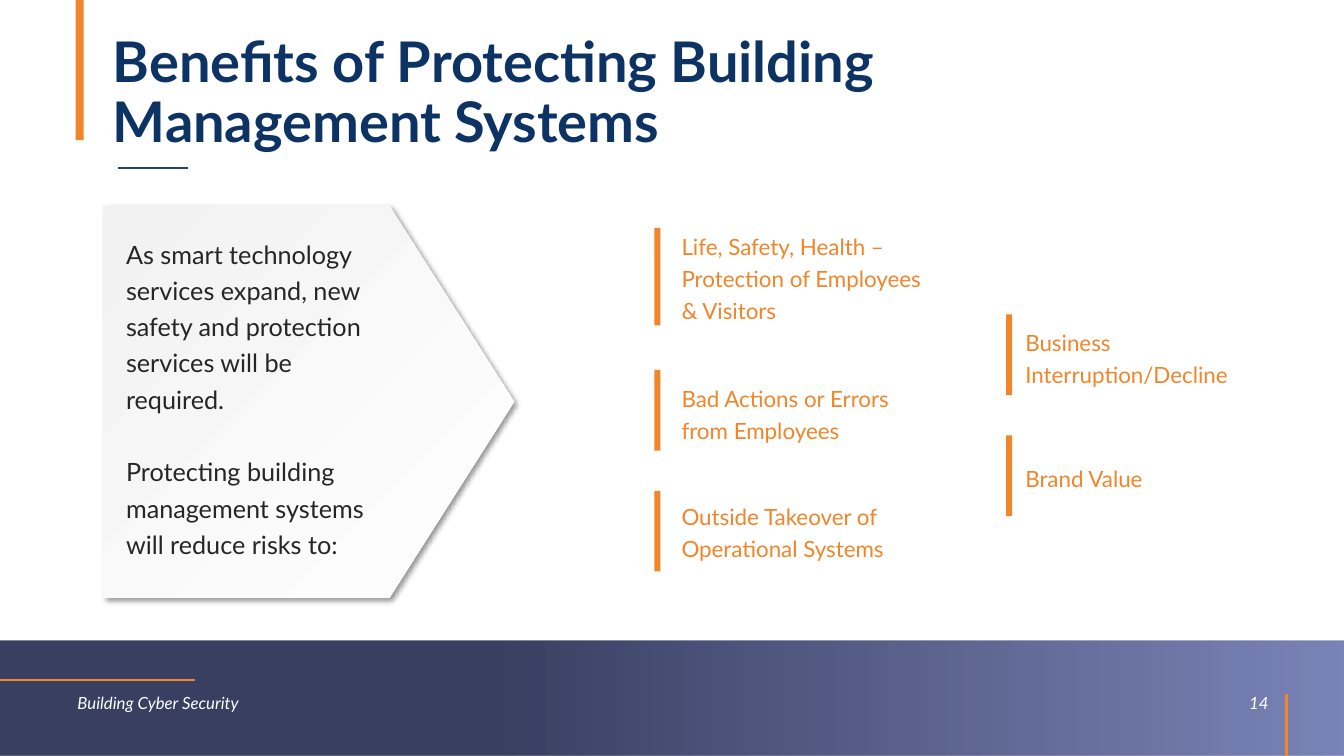
from lxml import etree
from pptx import Presentation
from pptx.dml.color import RGBColor
from pptx.enum import shapes, text
from pptx.oxml.ns import qn
from pptx.util import Inches, Pt

FONT = "Lato"
ORANGE = RGBColor(0xF1, 0x85, 0x2A)
NAVY = RGBColor(0x0C, 0x33, 0x64)
RULE_BLUE = RGBColor(0x21, 0x43, 0x6D)
BAND_DARK = RGBColor(0x30, 0x37, 0x5A)
BAND_LIGHT = RGBColor(0x6D, 0x77, 0xB0)
PALE_GREY = RGBColor(0xF2, 0xF2, 0xF2)
WHITE = RGBColor(0xFF, 0xFF, 0xFF)
BODY_GREY = RGBColor(0x26, 0x26, 0x26)

INTRO = [
    "As smart technology services expand, new safety and protection services will be required.",
    "Protecting building management systems will reduce risks to:",
]
# Text, text left, top and height, bar left, top and height
BENEFITS = [
    ("Life, Safety, Health –Protection of Employees & Visitors", 6.63, 2.13, 1.28, 6.49, 2.26, 0.97),
    ("Bad Actions or Errors from Employees", 6.63, 3.64, 0.92, 6.49, 3.67, 0.8),
    ("Outside Takeover of Operational Systems", 6.63, 4.81, 0.92, 6.49, 4.87, 0.8),
    ("Business Interruption/Decline", 10.04, 3.08, 0.89, 9.98, 3.12, 0.8),
    ("Brand Value", 10.04, 4.43, 0.59, 9.98, 4.32, 0.8),
]


def add_block(slide, kind, left, top, width, height, color=None):
    sp = slide.shapes.add_shape(kind, Inches(left), Inches(top), Inches(width), Inches(height))
    sp.shadow.inherit = False
    sp.line.fill.background()
    if color is not None:
        sp.fill.solid()
        sp.fill.fore_color.rgb = color
    return sp


def set_gradient(sp, angle, stops):
    """Fill with stops of (position, colour, opacity in percent)."""
    sp.fill.gradient()
    sp.fill.gradient_angle = angle
    for stop, (position, color, opacity) in zip(sp.fill.gradient_stops, stops):
        stop.position = position
        stop.color.rgb = color
    for clr, (_, _, opacity) in zip(sp._element.spPr.iter(qn("a:srgbClr")), stops):
        if opacity < 100:
            etree.SubElement(clr, qn("a:alpha"), val=str(opacity * 1000))


def add_drop_shadow(sp):
    effects = sp._element.spPr.find(qn("a:effectLst"))
    shadow = etree.SubElement(effects, qn("a:outerShdw"), blurRad=str(Pt(4)), dist=str(Pt(3)),
                              dir="2700000", algn="tl", rotWithShape="0")
    clr = etree.SubElement(shadow, qn("a:srgbClr"), val="000000")
    etree.SubElement(clr, qn("a:alpha"), val="40000")


def add_rule(slide, x1, y1, x2, y2, color):
    line = slide.shapes.add_connector(shapes.MSO_CONNECTOR.STRAIGHT,
                                      Inches(x1), Inches(y1), Inches(x2), Inches(y2))
    line.line.color.rgb = color
    line.line.width = Pt(1.5)
    etree.SubElement(line._element.spPr, qn("a:effectLst"))


def format_runs(p, size, color, bold=False, italic=False):
    for r in p.runs:
        r.font.name = FONT
        r.font.size = Pt(size)
        r.font.color.rgb = color
        r.font.bold = bold
        r.font.italic = italic


def add_text(slide, left, top, width, height):
    tf = slide.shapes.add_textbox(Inches(left), Inches(top), Inches(width), Inches(height)).text_frame
    tf.word_wrap = True
    return tf


def add_body(slide, left, top, width, height, paragraphs, size, color):
    tf = add_text(slide, left, top, width, height)
    tf.margin_left = tf.margin_top = tf.margin_bottom = Inches(0.13)
    for i, words in enumerate(paragraphs):
        p = tf.add_paragraph() if i else tf.paragraphs[0]
        p.text = words
        p.line_spacing = 1.2
        if i:
            p.space_before = Pt(26)
        format_runs(p, size, color)


def add_footer(slide, left, width, words, align):
    tf = add_text(slide, left, 6.77, width, 0.4)
    tf.vertical_anchor = text.MSO_ANCHOR.MIDDLE
    tf.text = words
    tf.paragraphs[0].alignment = align
    format_runs(tf.paragraphs[0], 12, WHITE, italic=True)


def set_title(slide, words):
    title = slide.shapes.title
    title.left, title.top = Inches(1.02), Inches(0.21)
    title.width, title.height = Inches(10.95), Inches(1.45)
    tf = title.text_frame
    tf.text = words
    tf.word_wrap = True
    tf.auto_size = text.MSO_AUTO_SIZE.NONE
    tf.vertical_anchor = text.MSO_ANCHOR.MIDDLE
    p = tf.paragraphs[0]
    p.alignment = text.PP_ALIGN.LEFT
    p.line_spacing = 0.9
    format_runs(p, 40, NAVY, bold=True)


def main():
    prs = Presentation()
    prs.slide_width, prs.slide_height = Inches(13.33), Inches(7.5)
    slide = prs.slides.add_slide(prs.slide_layouts[5])
    rect = shapes.MSO_SHAPE.RECTANGLE

    # Footer band and accents
    band = add_block(slide, rect, 0, 6.36, 13.33, 1.14)
    set_gradient(band, 0, [(0.37, BAND_DARK, 95), (1, BAND_LIGHT, 90)])
    add_block(slide, rect, 0.75, 0, 0.08, 1.39, ORANGE)
    add_rule(slide, 1.17, 1.67, 1.86, 1.67, RULE_BLUE)
    add_rule(slide, 0, 6.75, 1.93, 6.75, ORANGE)
    add_rule(slide, 12.76, 7.5, 12.76, 6.89, ORANGE)

    # Title and footer text
    set_title(slide, "Benefits of Protecting Building Management Systems")
    add_footer(slide, 0.67, 3.56, "Building Cyber Security", text.PP_ALIGN.LEFT)
    add_footer(slide, 9.68, 3, "14", text.PP_ALIGN.RIGHT)

    # Introduction arrow
    arrow = add_block(slide, shapes.MSO_SHAPE.PENTAGON, 1.02, 2.04, 4.08, 3.89)
    arrow.adjustments[0] = 0.318
    set_gradient(arrow, 315, [(0, PALE_GREY, 100), (1, WHITE, 100)])
    add_drop_shadow(arrow)
    add_body(slide, 1.12, 2.18, 2.91, 3.15, INTRO, 18, BODY_GREY)

    # Benefits with their bars
    for words, left, top, height, bar_left, bar_top, bar_height in BENEFITS:
        add_body(slide, left, top, 2.77, height, [words], 16, ORANGE)
        add_block(slide, rect, bar_left, bar_top, 0.06, bar_height, ORANGE)

    prs.save("out.pptx")


if __name__ == "__main__":
    main()
